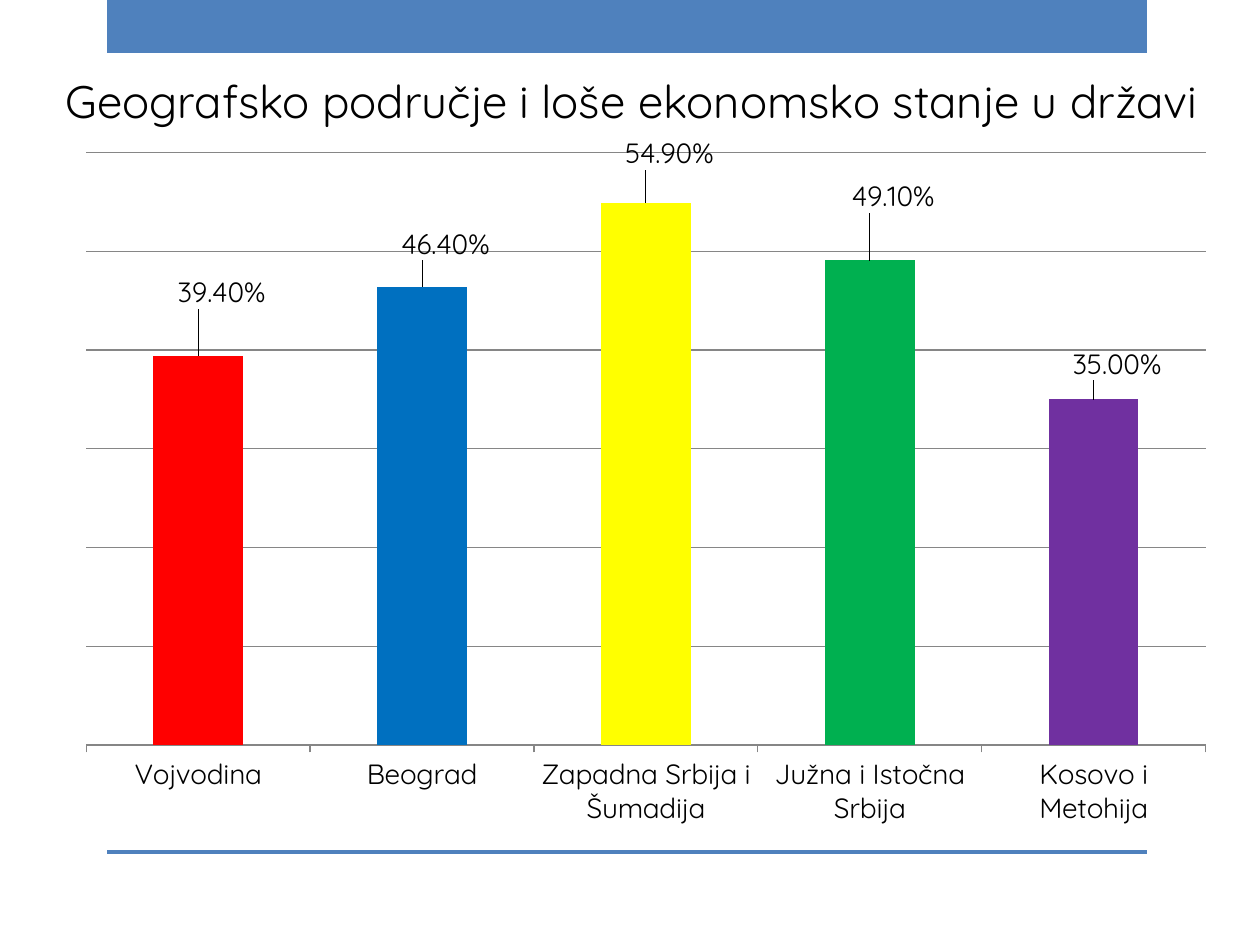
from lxml import etree
from pptx import Presentation
from pptx.chart.data import CategoryChartData
from pptx.dml.color import RGBColor
from pptx.enum.chart import XL_CHART_TYPE, XL_LABEL_POSITION, XL_TICK_LABEL_POSITION, XL_TICK_MARK
from pptx.enum.shapes import MSO_SHAPE
from pptx.enum.text import PP_ALIGN
from pptx.oxml.ns import qn
from pptx.util import Pt

EMU_PER_PX = 914400 / 126
COLORS = {
    "accent": "4F81BD", "text": "000000", "grid": "868686",
    "red": "FF0000", "blue": "0070C0", "yellow": "FFFF00",
    "green": "00B050", "purple": "7030A0",
}
# Region, share, bar colour, label offset as fractions of the chart
REGIONS = [
    ("Vojvodina", 0.394, "red", (0.02, -0.06)),
    ("Beograd", 0.464, "blue", (0.02, -0.03)),
    ("Zapadna Srbija i Šumadija", 0.549, "yellow", (0.02, -0.04)),
    ("Južna i Istočna Srbija", 0.491, "green", (0.02, -0.06)),
    ("Kosovo i Metohija", 0.35, "purple", (0.02, -0.02)),
]


def px(*lengths):
    return [round(length * EMU_PER_PX) for length in lengths]


def color(name):
    return RGBColor.from_string(COLORS[name])


def manual_layout(**values):
    """Chart layout element; values are fractions of the chart size."""
    layout = etree.Element(qn("c:layout"))
    manual = etree.SubElement(layout, qn("c:manualLayout"))
    for tag, value in values.items():
        etree.SubElement(manual, qn(f"c:{tag}")).set("val", str(value))
    return layout


class SlideBuilder:
    font_name = "Quicksand"

    def __init__(self, slide):
        self.slide = slide

    def style_font(self, font, size):
        font.name = self.font_name
        font.size = Pt(size)
        font.bold = False
        font.color.rgb = color("text")

    def bar(self, left, top, width, height):
        shape = self.slide.shapes.add_shape(MSO_SHAPE.RECTANGLE, *px(left, top, width, height))
        shape.shadow.inherit = False
        shape.fill.solid()
        shape.fill.fore_color.rgb = color("accent")
        shape.line.fill.background()

    def title(self, text, left, top, width, height):
        text_frame = self.slide.shapes.add_textbox(*px(left, top, width, height)).text_frame
        text_frame.word_wrap = True
        text_frame.text = text
        paragraph = text_frame.paragraphs[0]
        paragraph.alignment = PP_ALIGN.CENTER
        self.style_font(paragraph.runs[0].font, 26)

    def column_chart(self, regions, left, top, width, height):
        data = CategoryChartData(number_format="0.00%")
        data.categories = [region[0] for region in regions]
        data.add_series("Series 1", [region[1] for region in regions])
        chart = self.slide.shapes.add_chart(
            XL_CHART_TYPE.COLUMN_CLUSTERED, *px(left, top, width, height), data).chart
        chart.has_legend = False
        chart.has_title = False
        chart.font.name = "Times New Roman"
        chart.font.size = Pt(10)
        chart.font.color.rgb = color("text")
        self.style_axes(chart)

        # Plot area
        plot_area = chart.plots[0]._element.getparent()
        for layout in plot_area.findall(qn("c:layout")):
            plot_area.remove(layout)
        plot_area.insert(0, manual_layout(
            layoutTarget="inner", xMode="edge", yMode="edge", x=0.02, y=0.02, w=0.96, h=0.846))

        # Bars and their labels
        plot = chart.plots[0]
        plot.gap_width = 150
        plot.vary_by_categories = False
        series = plot.series[0]
        series.format.fill.solid()
        series.format.fill.fore_color.rgb = color(regions[0][2])
        labels = series.data_labels
        labels.show_value = True
        labels.number_format = "0.00%"
        labels.number_format_is_linked = False
        self.style_font(labels.font, 16)
        for index, (_, _, fill_name, _) in enumerate(regions):
            point = series.points[index]
            point.format.fill.solid()
            point.format.fill.fore_color.rgb = color(fill_name)
            point.data_label.position = XL_LABEL_POSITION.OUTSIDE_END
            self.style_font(point.data_label.font, 16)
        label_elements = series._element.findall(f"{qn('c:dLbls')}/{qn('c:dLbl')}")
        for element, (_, _, _, (x, y)) in zip(label_elements, regions):
            element.find(qn("c:idx")).addnext(manual_layout(x=x, y=y))

    def style_axes(self, chart):
        category_axis, value_axis = chart.category_axis, chart.value_axis
        category_axis.major_tick_mark = XL_TICK_MARK.OUTSIDE
        category_axis.tick_label_position = XL_TICK_LABEL_POSITION.LOW
        self.style_font(category_axis.tick_labels.font, 16)
        value_axis.minimum_scale = 0
        value_axis.maximum_scale = 0.6
        value_axis.major_unit = 0.1
        value_axis.has_major_gridlines = True
        value_axis.tick_labels.number_format = "0.00%"
        value_axis.tick_labels.number_format_is_linked = False
        value_axis.visible = False
        for line in (category_axis.format.line, value_axis.major_gridlines.format.line):
            line.color.rgb = color("grid")
            line.width = Pt(0.75)


def main():
    presentation = Presentation()
    presentation.slide_width, presentation.slide_height = px(1260, 945)
    builder = SlideBuilder(presentation.slides.add_slide(presentation.slide_layouts[6]))

    # Frame bars
    builder.bar(107, 0, 1040, 53)
    builder.bar(107, 850, 1040, 4)

    # Chart and heading
    builder.column_chart(REGIONS, 63, 136, 1166, 703)
    builder.title("Geografsko područje i loše ekonomsko stanje u državi", 13, 67, 1239, 123)

    presentation.save("out.pptx")


if __name__ == "__main__":
    main()
